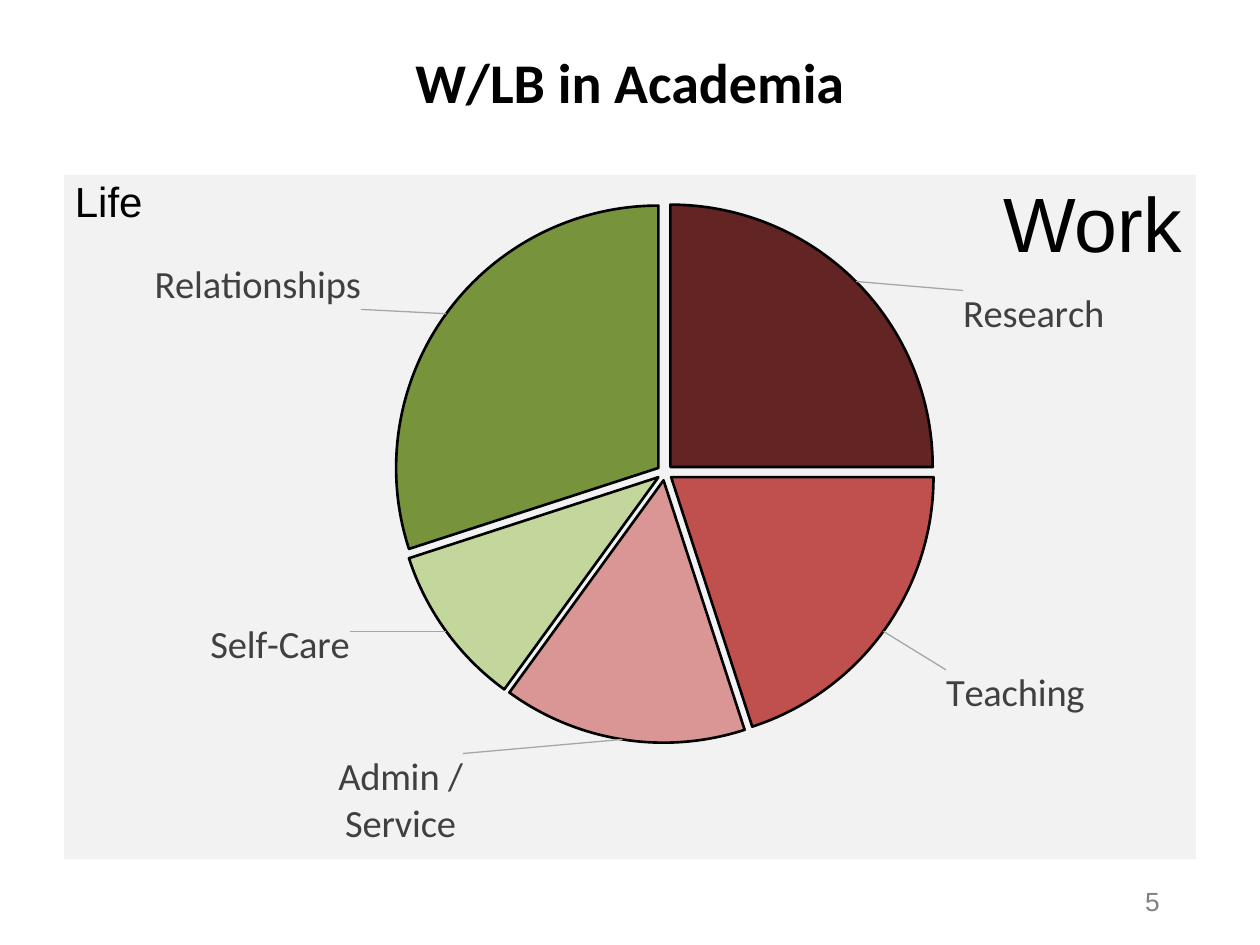
from collections import namedtuple
from dataclasses import dataclass

from lxml.etree import SubElement, fromstring
from pptx import Presentation
from pptx.chart.data import CategoryChartData
from pptx.dml.color import RGBColor
from pptx.enum.chart import XL_CHART_TYPE as ChartType, XL_LABEL_POSITION as LabelPosition
from pptx.enum.shapes import MSO_SHAPE as Shape
from pptx.enum.text import MSO_ANCHOR as Anchor, MSO_AUTO_SIZE as AutoSize, PP_ALIGN as Align
from pptx.oxml.ns import qn
from pptx.util import Pt

Box = namedtuple("Box", "left top width height")
Slice = namedtuple("Slice", "category share color shift caption", defaults=[None])


@dataclass(frozen=True)
class Theme:
    heading_font: str = "Calibri"
    body_font: str = "Arial"
    ink: str = "000000"
    panel: str = "F2F2F2"
    label: str = "404040"
    muted: str = "808080"
    leader: str = "A6A6A6"
    title_size: int = 32
    work_size: int = 44
    life_size: int = 24
    label_size: int = 22
    number_size: int = 15


THEME = Theme()
SLICES = [
    Slice("Research", 25, "632523", (0.09, 0.09)),
    Slice("Teaching", 20, "C0504D", (0.05, 0.05)),
    Slice("Administration and Service", 15, "D99694", (-0.14, 0.01), "Admin / Service"),
    Slice("Self-Care", 10, "C3D69B", (-0.08, -0.02)),
    Slice("Relationships", 30, "77933C", (-0.07, 0)),
]


def points(box):
    return [Pt(length) for length in box]


def style_font(font, size, color, name, bold=False):
    font.size, font.name, font.bold = Pt(size), name, bold
    font.color.rgb = RGBColor.from_string(color)


def write(frame, text, *, size, color=THEME.ink, font=THEME.body_font,
          bold=False, align=Align.LEFT, anchor=Anchor.TOP):
    frame.text = text
    frame.vertical_anchor = anchor
    frame.paragraphs[0].alignment = align
    style_font(frame.paragraphs[0].runs[0].font, size, color, font, bold)


def add_caption(slide, box, text, **style):
    frame = slide.shapes.add_textbox(*points(box)).text_frame
    frame.word_wrap = False
    frame.auto_size = AutoSize.SHAPE_TO_FIT_TEXT
    write(frame, text, **style)


def add_title(slide, box):
    title = slide.shapes.title
    title.left, title.top, title.width, title.height = points(box)
    write(title.text_frame, "W/LB in Academia", size=THEME.title_size,
          font=THEME.heading_font, bold=True, align=Align.CENTER, anchor=Anchor.MIDDLE)


def add_panel(slide, box):
    panel = slide.shapes.add_shape(Shape.RECTANGLE, *points(box))
    panel.shadow.inherit = False
    panel.fill.solid()
    panel.fill.fore_color.rgb = RGBColor.from_string(THEME.panel)
    panel.line.fill.background()


def manual_layout(**settings):
    layout = fromstring(f'<c:layout xmlns:c="{CHART_NS}"/>')
    manual = SubElement(layout, qn("c:manualLayout"))
    for tag, value in settings.items():
        SubElement(manual, qn(f"c:{tag}")).set("val", str(value))
    return layout


CHART_NS = qn("c:x")[1:-2]


def show_category(labels):
    labels.find(qn("c:showVal")).set("val", "0")
    labels.find(qn("c:showCatName")).set("val", "1")


def format_slice(point, part):
    point.format.fill.solid()
    point.format.fill.fore_color.rgb = RGBColor.from_string(part.color)
    point.format.line.color.rgb = RGBColor.from_string(THEME.ink)
    point.format.line.width = Pt(1.5)
    label = point.data_label
    if part.caption:
        write(label.text_frame, part.caption, size=THEME.label_size,
              color=THEME.label, font=THEME.heading_font, align=Align.CENTER)
    else:
        style_font(label.font, THEME.label_size, THEME.label, THEME.heading_font)
    label.position = LabelPosition.OUTSIDE_END


def add_pie(slide, box):
    data = CategoryChartData(number_format="0")
    data.categories = [part.category for part in SLICES]
    data.add_series("Series 1", [part.share for part in SLICES])
    chart = slide.shapes.add_chart(ChartType.PIE, *points(box), data).chart
    chart.has_title = chart.has_legend = False
    style_font(chart.font, 10, THEME.ink, THEME.heading_font)
    plot = chart.plots[0]
    plot.vary_by_categories = True
    series = plot.series[0]

    labels = series.data_labels
    labels.show_value, labels.show_category_name = False, True
    labels.number_format, labels.number_format_is_linked = "0%", False
    labels.position = LabelPosition.OUTSIDE_END
    style_font(labels.font, THEME.label_size, THEME.label, THEME.heading_font)
    for index, part in enumerate(SLICES):
        format_slice(series.points[index], part)

    root = series._element
    for part, label in zip(SLICES, root.iter(qn("c:dLbl"))):
        show_category(label)
        x, y = part.shift
        label.find(qn("c:idx")).addnext(manual_layout(x=x, y=y))
    root.find(qn("c:dPt")).addprevious(
        fromstring(f'<c:explosion xmlns:c="{CHART_NS}" val="3"/>'))

    group = root.find(qn("c:dLbls"))
    for tag in ("c:showLeaderLines", "c:leaderLines"):
        for old in group.findall(qn(tag)):
            group.remove(old)
    SubElement(group, qn("c:showLeaderLines")).set("val", "1")
    outline = SubElement(SubElement(SubElement(
        group, qn("c:leaderLines")), qn("c:spPr")), qn("a:ln"), w="9525")
    SubElement(SubElement(outline, qn("a:solidFill")), qn("a:srgbClr")).set("val", THEME.leader)

    area = plot._element.getparent()
    for old in area.findall(qn("c:layout")):
        area.remove(old)
    area.insert(0, manual_layout(layoutTarget="inner", xMode="edge", yMode="edge",
                                 x=0.29, y=0.04, w=0.48, h=0.79))


def add_balance(slide, box):
    add_panel(slide, box)
    right = box.left + box.width
    add_caption(slide, Box(right - 117, box.top - 3, 117, 60), "Work", size=THEME.work_size)
    add_caption(slide, Box(box.left - 1, box.top - 3, 54, 36), "Life", size=THEME.life_size)
    add_pie(slide, box._replace(width=box.width + 1))


def main():
    deck = Presentation()
    deck.slide_width, deck.slide_height = Pt(720), Pt(540)
    slide = deck.slides.add_slide(deck.slide_layouts[5])
    add_title(slide, Box(36, 21.6, 648, 49.7))
    add_balance(slide, Box(36.7, 100, 646.6, 391))
    add_caption(slide, Box(647.3, 502.6, 33, 25), "5",
                size=THEME.number_size, color=THEME.muted)
    deck.save("out.pptx")


if __name__ == "__main__":
    main()
